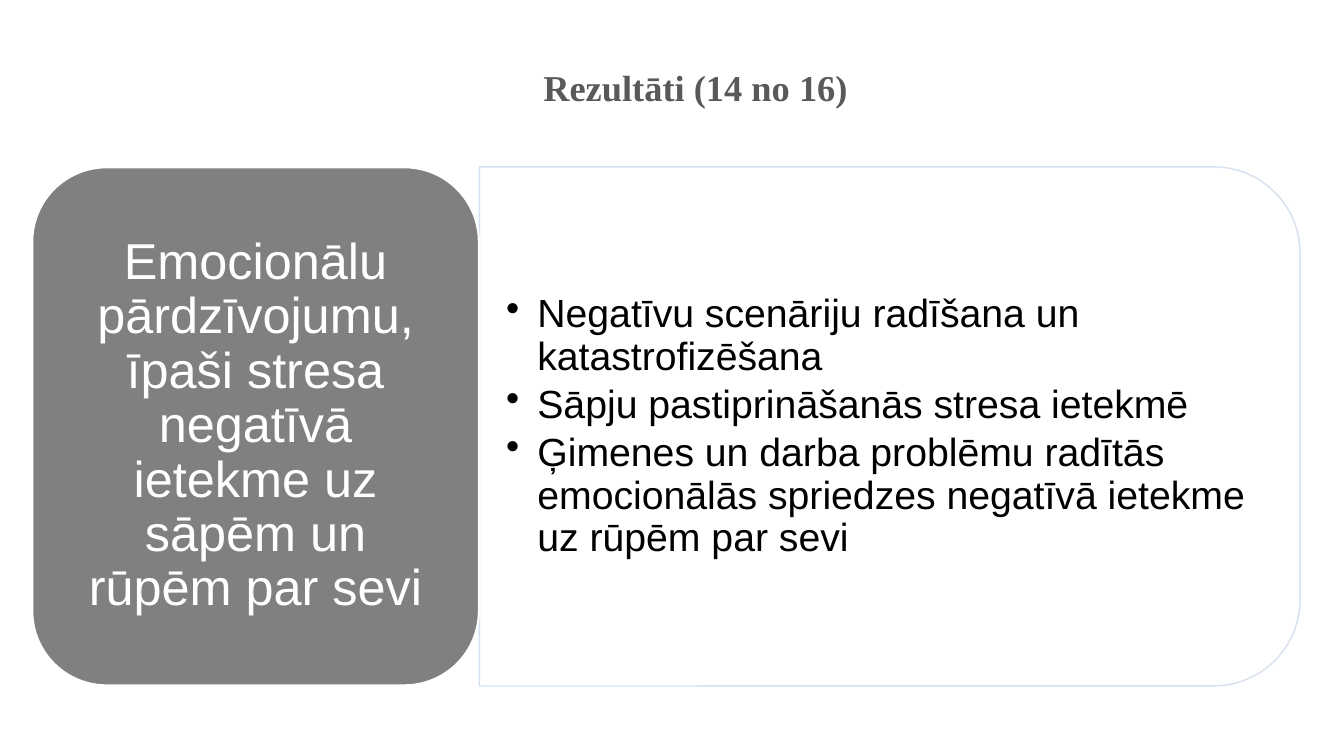
from dataclasses import dataclass

import pptx
import pptx.dml.color
import pptx.enum.shapes
import pptx.enum.text
import pptx.oxml
import pptx.oxml.ns
import pptx.util
from pptx.util import Inches

ALIGN = pptx.enum.text.PP_ALIGN
ANCHOR = pptx.enum.text.MSO_ANCHOR
SHAPE = pptx.enum.shapes.MSO_SHAPE


@dataclass(frozen=True)
class Theme:
    title_font: str = "Times New Roman"
    body_font: str = "Arial"
    title_size: int = 26
    theme_size: int = 36
    finding_size: int = 28
    title_color: str = "58595B"
    block: str = "808080"
    light: str = "FFFFFF"
    dark: str = "000000"
    outline: str = "D2DEEF"
    opacity: int = 90
    line_spacing: float = 0.9


THEME = Theme()
TITLE = "Rezultāti (14 no 16)"
CATEGORY = ("Emocionālu pārdzīvojumu, īpaši stresa negatīvā ietekme "
            "uz sāpēm un rūpēm par sevi")
FINDINGS = [
    "Negatīvu scenāriju radīšana un katastrofizēšana",
    "Sāpju pastiprināšanās stresa ietekmē",
    "Ģimenes un darba problēmu radītās emocionālās spriedzes "
    "negatīvā ietekme uz rūpēm par sevi",
]


def rgb(color):
    return pptx.dml.color.RGBColor.from_string(color)


def set_frame(frame, anchor, inset_x=0, inset_y=0):
    frame.word_wrap = True
    frame.auto_size = pptx.enum.text.MSO_AUTO_SIZE.NONE
    frame.vertical_anchor = anchor
    frame.margin_left = frame.margin_right = Inches(inset_x)
    frame.margin_top = frame.margin_bottom = Inches(inset_y)


def style_paragraph(paragraph, align, font, size, color, bold=False):
    paragraph.alignment = align
    paragraph.line_spacing = THEME.line_spacing
    for run in paragraph.runs:
        run.font.name = font
        run.font.size = pptx.util.Pt(size)
        run.font.bold = bold
        run.font.color.rgb = rgb(color)


def add_bullet(paragraph, indent):
    properties = paragraph._p.get_or_add_pPr()
    properties.set("marL", str(Inches(indent)))
    properties.set("indent", str(-Inches(indent)))
    properties.append(pptx.oxml.parse_xml(
        f'<a:buChar {pptx.oxml.ns.nsdecls("a")} char="•"/>'))


def set_opacity(color_format, percent):
    """Apply opacity to a solid fill's or line's RGB colour."""
    color = color_format._xFill.find(pptx.oxml.ns.qn("a:srgbClr"))
    color.append(pptx.oxml.parse_xml(
        f'<a:alpha {pptx.oxml.ns.nsdecls("a")} val="{percent * 1000}"/>'))


def add_block(slide, kind, left, top, width, height, fill, outline, weight):
    block = slide.shapes.add_shape(
        kind, Inches(left), Inches(top), Inches(width), Inches(height))
    block.shadow.inherit = False
    block.fill.solid()
    block.fill.fore_color.rgb = rgb(fill)
    block.line.color.rgb = rgb(outline)
    block.line.width = pptx.util.Pt(weight)
    return block


def set_title(slide):
    title = slide.shapes.title
    title.left, title.top = Inches(1.15), Inches(0.7)
    title.width, title.height = Inches(11.5), Inches(1.13)
    title.text_frame.text = TITLE
    set_frame(title.text_frame, ANCHOR.TOP)
    style_paragraph(title.text_frame.paragraphs[0], ALIGN.CENTER,
                    THEME.title_font, THEME.title_size, THEME.title_color, True)


def add_findings_panel(slide):
    """Panel whose rounded end faces right: a top-rounded shape turned 90°."""
    panel = add_block(slide, SHAPE.ROUND_2_SAME_RECTANGLE, 6.25, 0.16,
                      5.15, 8.14, THEME.light, THEME.outline, 1)
    panel.rotation = 90
    for paint in (panel.fill, panel.line.fill):
        set_opacity(paint._fill if hasattr(paint._fill, "_xFill") else
                    paint.fore_color, THEME.opacity)


def add_findings(slide):
    box = slide.shapes.add_textbox(
        Inches(4.75), Inches(1.91), Inches(7.89), Inches(4.65))
    frame = box.text_frame
    frame.text = "\n".join(FINDINGS)
    set_frame(frame, ANCHOR.MIDDLE, 0.27, 0.14)
    for paragraph in frame.paragraphs:
        add_bullet(paragraph, 0.31)
        style_paragraph(paragraph, ALIGN.LEFT, THEME.body_font,
                        THEME.finding_size, THEME.dark)
        paragraph.space_after = pptx.util.Pt(0.15 * THEME.finding_size)


def add_category(slide):
    block = add_block(slide, SHAPE.ROUNDED_RECTANGLE, 0.32, 1.66,
                      4.43, 5.14, THEME.block, THEME.light, 1.5)
    block.text_frame.text = CATEGORY
    set_frame(block.text_frame, ANCHOR.MIDDLE, 0.15, 0.07)
    style_paragraph(block.text_frame.paragraphs[0], ALIGN.CENTER,
                    THEME.body_font, THEME.theme_size, THEME.light)


def main():
    deck = pptx.Presentation()
    deck.slide_width, deck.slide_height = Inches(13.33), Inches(7.5)
    slide = deck.slides.add_slide(deck.slide_layouts.get_by_name("Title Only"))
    set_title(slide)
    add_findings_panel(slide)
    add_findings(slide)
    add_category(slide)
    deck.save("out.pptx")


if __name__ == "__main__":
    main()
